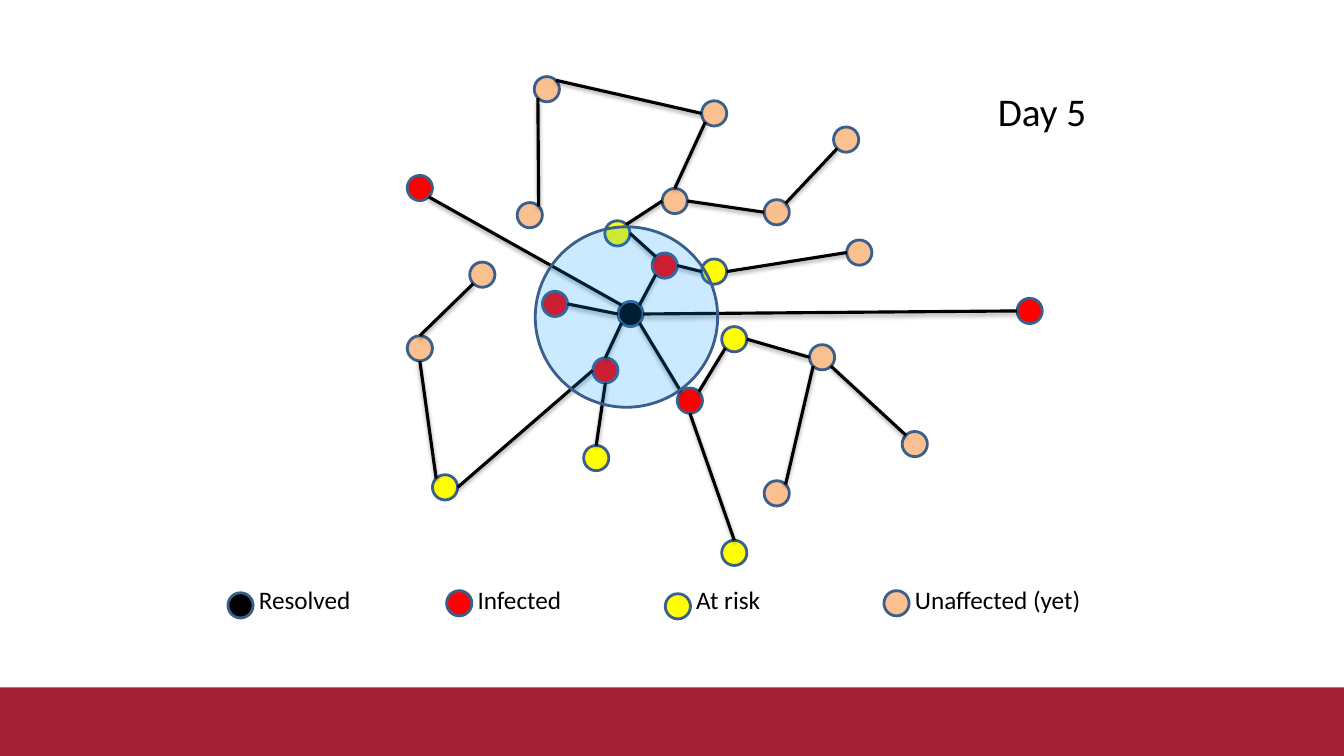
from math import sqrt
from lxml.etree import SubElement
from pptx import Presentation
from pptx.dml.color import RGBColor
from pptx.enum.shapes import MSO_CONNECTOR, MSO_SHAPE
from pptx.oxml.ns import qn
from pptx.util import Pt

# Content: status colours, people (status, centre x, centre y) and contacts
STATUS = {"Resolved": "000000", "Infected": "FF0000",
          "At risk": "FFFF00", "Unaffected (yet)": "FAC090"}
PEOPLE = {
    "Resolved": {"hub": (450.4, 224.3)},
    "Infected": {
        "i1": (432.4, 264.6), "i2": (492.8, 286.2), "i3": (735.5, 222.1),
        "i4": (299.9, 134.3), "i5": (474.8, 189.7), "i6": (396.4, 217.1)},
    "At risk": {
        "r1": (510.1, 194), "r2": (425.9, 327.2), "r3": (317.9, 348.1),
        "r4": (524.5, 242.3), "r5": (524.5, 394.9), "r6": (441, 166.7)},
    "Unaffected (yet)": {
        "u1": (378.4, 153.7), "u2": (299.9, 248.8), "u3": (510.1, 81),
        "u4": (554.8, 352.4), "u5": (482, 143.6), "u6": (587.2, 255.2),
        "u7": (613.8, 180.4), "u8": (344.5, 196.2), "u9": (390.6, 63.7),
        "u10": (653.4, 317.2), "u11": (554.8, 151.6), "u12": (604.4, 99.7)},
}
# Each contact: person, side of that dot, other person, side of that dot
CONTACTS = [
    ("hub", "NE", "i5", "SW"), ("hub", "SE", "i2", "NW"),
    ("i6", "E", "hub", "W"), ("i1", "N", "hub", "SW"),
    ("i5", "NW", "r6", "E"), ("i5", "E", "r1", "W"),
    ("u6", "W", "r4", "E"), ("i2", "NE", "r4", "SW"),
    ("r6", "NE", "u5", "W"), ("u5", "E", "u11", "W"),
    ("u7", "W", "r1", "E"), ("u3", "SW", "u5", "N"),
    ("u12", "SW", "u11", "NE"), ("u10", "NW", "u6", "SE"),
    ("u4", "NE", "u6", "SW"), ("r2", "N", "i1", "S"),
    ("r5", "N", "i2", "S"), ("i3", "W", "hub", "E"),
    ("r3", "E", "i1", "W"), ("u2", "S", "r3", "NW"),
    ("i4", "SE", "hub", "NW"), ("u9", "SW", "u1", "NE"),
    ("u9", "NE", "u3", "W"), ("u8", "SW", "u2", "N"),
]
LEGEND_DOT_Y = [432.4, 430.9, 433.1, 430.9]
LEGEND_X, LEGEND_STEP, LEGEND_TEXT_Y = 171.8, 156.2, 414
RADIUS = 9
OUTLINE = "3A5F8C"

deck = Presentation()
deck.slide_width, deck.slide_height = Pt(960), Pt(540)
page = deck.slides.add_slide(deck.slide_layouts[6])


def colour(value):
    return RGBColor.from_string(value)


def add_filled(kind, left, top, width, height, fill, outline=None):
    shape = page.shapes.add_shape(kind, Pt(left), Pt(top), Pt(width), Pt(height))
    shape.shadow.inherit = False
    shape.fill.solid()
    shape.fill.fore_color.rgb = colour(fill)
    if outline:
        shape.line.color.rgb = colour(outline)
        shape.line.width = Pt(2)
    else:
        shape.line.fill.background()
    return shape


def add_dot(x, y, fill):
    add_filled(MSO_SHAPE.OVAL, x - RADIUS, y - RADIUS, 2 * RADIUS, 2 * RADIUS,
               fill, OUTLINE)


def add_label(text, left, top, width, height, size):
    box = page.shapes.add_textbox(Pt(left), Pt(top), Pt(width), Pt(height))
    box.text_frame.word_wrap = True
    box.text_frame.text = text
    span = box.text_frame.paragraphs[0].runs[0]
    span.font.name = "Calibri"
    span.font.size = Pt(size)
    span.font.color.rgb = colour("000000")


def rim_point(centre, side):
    across = ("E" in side) - ("W" in side)
    down = ("S" in side) - ("N" in side)
    reach = RADIUS / sqrt(len(side))
    return Pt(centre[0] + across * reach), Pt(centre[1] + down * reach)


def add_contact(start, end):
    link = page.shapes.add_connector(MSO_CONNECTOR.STRAIGHT, *start, *end)
    link.line.color.rgb = colour("000000")
    link.line.width = Pt(2.25)
    effects = SubElement(link._element.spPr, qn("a:effectLst"))
    shadow = SubElement(effects, qn("a:outerShdw"), blurRad=str(Pt(3.1)),
                        dist=str(Pt(1.8)), dir="5400000", rotWithShape="0")
    black = SubElement(shadow, qn("a:srgbClr"), val="000000")
    SubElement(black, qn("a:alpha"), val="35000")


# Footer band
add_filled(MSO_SHAPE.RECTANGLE, 0, 491, 960, 49, "A42036")

# People
centres = {}
for status, group in PEOPLE.items():
    centres.update(group)
    for x, y in group.values():
        add_dot(x, y, STATUS[status])
add_label("Day 5", 705.6, 59, 90, 40, 28)

# Contacts
for first, first_side, second, second_side in CONTACTS:
    add_contact(rim_point(centres[first], first_side),
                rim_point(centres[second], second_side))

# Legend
for index, (status, dot_y) in enumerate(zip(STATUS, LEGEND_DOT_Y)):
    x = LEGEND_X + index * LEGEND_STEP
    add_dot(x, dot_y, STATUS[status])
    add_label(status, x + 6, LEGEND_TEXT_Y, 140, 36, 18)

# Translucent zone around the resolved case
zone = add_filled(MSO_SHAPE.OVAL, 382.3, 162, 130.3, 128.9, "0099FF", OUTLINE)
zone_colour = zone._element.spPr.find(qn("a:solidFill")).find(qn("a:srgbClr"))
SubElement(zone_colour, qn("a:alpha"), val="20000")

deck.save("out.pptx")
